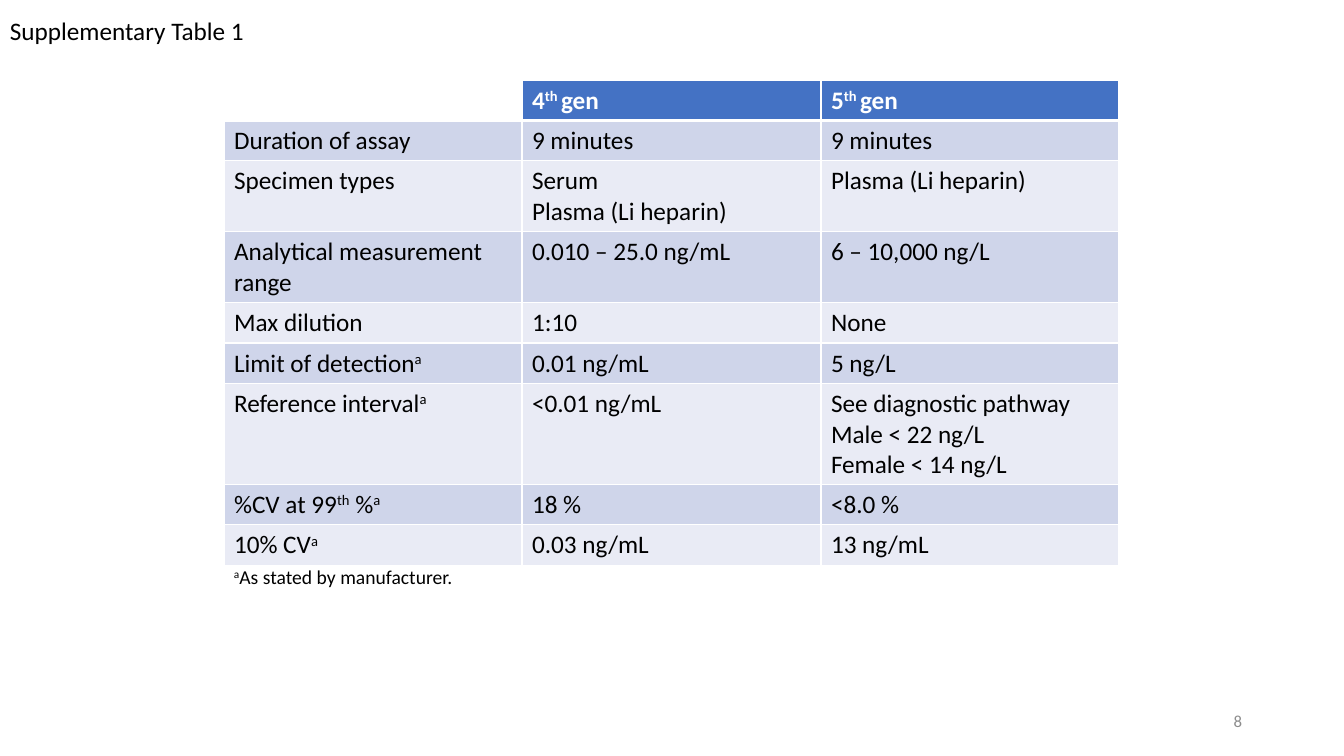
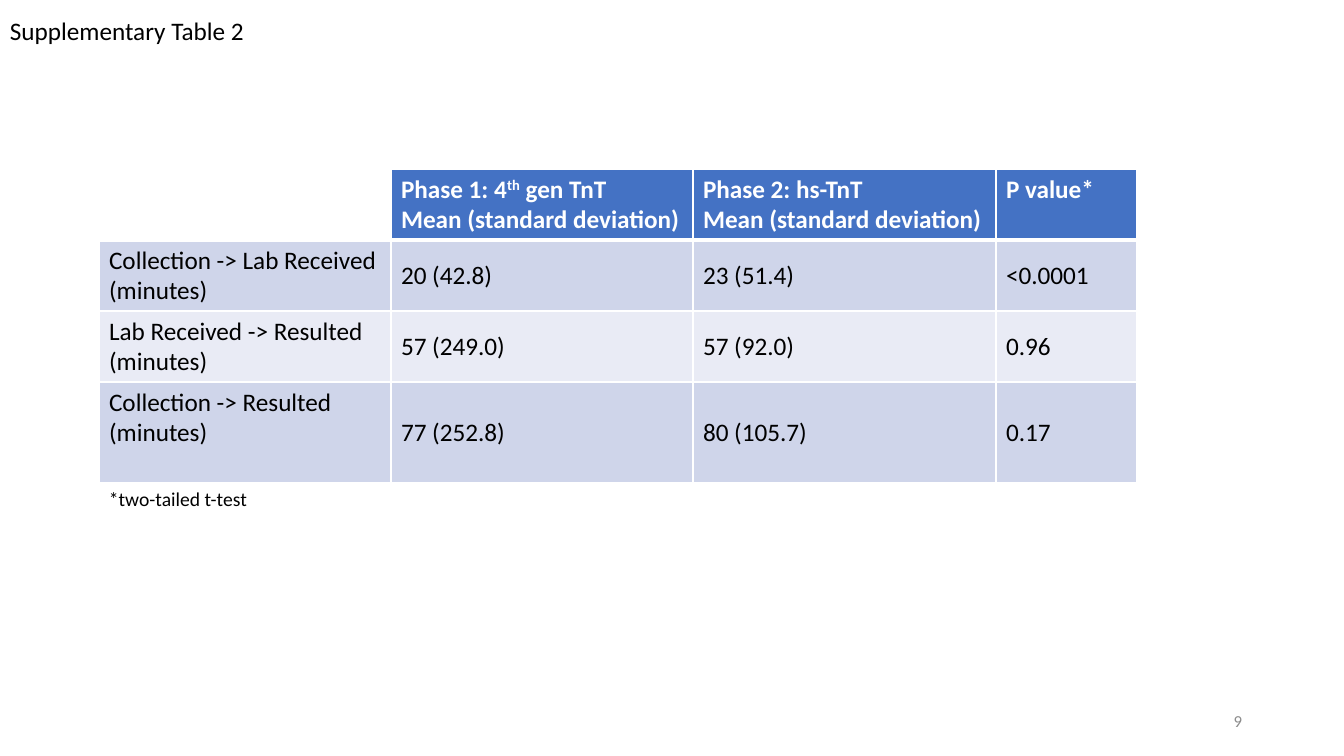
from lxml import etree
from pptx import Presentation
from pptx import util as u
from pptx.dml.color import RGBColor
from pptx.enum import text
from pptx.oxml.ns import qn

PX = 914400 / 100.8  # EMU in one px; the slide is 1344 x 756 px
ROW_HEIGHT = {1: 40, 2: 71, 3: 101}  # px, by lines of text

# Text formats
TITLE = dict(size=18, color="000000")
HEADER = dict(size=18, color="FFFFFF", bold=True)
BODY = dict(size=18, color="000000", bold=False)
NOTE = dict(size=14, color="000000")
NUMBER = dict(size=12, color="8C8C8C")

TOP, MIDDLE = text.MSO_ANCHOR.TOP, text.MSO_ANCHOR.MIDDLE
LEFT, RIGHT = text.PP_ALIGN.LEFT, text.PP_ALIGN.RIGHT


def px(length):
    return u.Emu(round(length * PX))


def rgb(value):
    return RGBColor.from_string(value)


class Deck:
    font = "Calibri"
    header_fill = "4472C4"
    bands = ("CFD5EA", "E9EBF5")
    rule = "FFFFFF"

    def __init__(self):
        self.prs = Presentation()
        self.prs.slide_width, self.prs.slide_height = px(1344), px(756)
        self.slide = None

    def page(self, title, number):
        """Start a slide with its shared title and page number."""
        self.slide = self.prs.slides.add_slide(self.prs.slide_layouts[6])
        self.label(number, (950, 701, 302, 40), NUMBER, RIGHT, MIDDLE)
        self.label(title, (0, 10, 291, 40), TITLE)

    def set_text(self, frame, content, style, align=LEFT):
        """One paragraph a line; text between ^ marks is superscript."""
        for i, line in enumerate(content.split("\n")):
            para = frame.paragraphs[0] if i == 0 else frame.add_paragraph()
            para.alignment = align
            for j, part in enumerate(line.split("^")):
                if not part:
                    continue
                run = para.add_run()
                run.text = part
                self.style_font(run.font, style)
                if j % 2:
                    run._r.get_or_add_rPr().set("baseline", "30000")

    def style_font(self, font, style):
        font.name = self.font
        for name, value in style.items():
            if name == "color":
                font.color.rgb = rgb(value)
            else:
                setattr(font, name, u.Pt(value) if name == "size" else value)

    def label(self, content, box, style, align=LEFT, anchor=TOP, wrap=True):
        frame = self.slide.shapes.add_textbox(*map(px, box)).text_frame
        frame.word_wrap = wrap
        frame.vertical_anchor = anchor
        self.set_text(frame, content, style, align)

    def border(self, cell, **widths):
        props = cell._tc.get_or_add_tcPr()
        for side in "LRTB":
            line = etree.SubElement(props, qn(f"a:ln{side}"),
                                    w=str(u.Pt(widths.get(side, 1))))
            fill = etree.SubElement(line, qn("a:solidFill"))
            etree.SubElement(fill, qn("a:srgbClr"), val=self.rule)

    def table(self, corner, columns, line_counts, rows, value_anchor=TOP):
        heights = [ROW_HEIGHT[count] for count in line_counts]
        size = sum(columns), sum(heights)
        grid = self.slide.shapes.add_table(
            len(rows), len(columns), *map(px, (*corner, *size))).table
        grid.horz_banding = False
        for column, width in zip(grid.columns, columns):
            column.width = px(width)
        for r, (row, height) in enumerate(zip(rows, heights)):
            grid.rows[r].height = px(height)
            for c, content in enumerate(row):
                cell = grid.cell(r, c)
                # A thick rule parts the header from the body
                self.border(cell, **{0: {"B": 3}, 1: {"T": 3}}.get(r, {}))
                if content:
                    cell.fill.solid()
                    cell.fill.fore_color.rgb = rgb(
                        self.bands[(r - 1) % 2] if r else self.header_fill)
                else:
                    cell.fill.background()
                cell.vertical_anchor = value_anchor if r and c else TOP
                self.set_text(cell.text_frame, content, BODY if r else HEADER)


def main():
    deck = Deck()

    # Assay comparison
    deck.page("Supplementary Table 1", "8")
    deck.table((224, 80), (298, 299, 298), (1, 1, 2, 2, 1, 1, 3, 1, 1), [
        ("", "4^th ^gen", "5^th ^gen"),
        ("Duration of assay", "9 minutes", "9 minutes"),
        ("Specimen types", "Serum\nPlasma (Li heparin)",
         "Plasma (Li heparin)"),
        ("Analytical measurement range", "0.010 – 25.0 ng/mL",
         "6 – 10,000 ng/L"),
        ("Max dilution", "1:10", "None"),
        ("Limit of detection^a^", "0.01 ng/mL", "5 ng/L"),
        ("Reference interval^a^", "<0.01 ng/mL",
         "See diagnostic pathway\nMale < 22 ng/L\nFemale < 14 ng/L"),
        ("%CV at 99^th^ %^a^", "18 %", "<8.0 %"),
        ("10% CV^a^", "0.03 ng/mL", "13 ng/mL"),
    ])
    deck.label("^a^As stated by manufacturer.", (224, 560, 1043, 34), NOTE)

    # Turnaround times
    deck.page("Supplementary Table 2", "9")
    mean = "\nMean (standard deviation)"
    deck.table((99, 169), (292, 302, 303, 141), (2, 2, 2, 3), [
        ("", "Phase 1: 4^th^ gen TnT" + mean, "Phase 2: hs-TnT" + mean,
         "P value*"),
        ("Collection -> Lab Received\n(minutes)",
         "20 (42.8)", "23 (51.4)", "<0.0001"),
        ("Lab Received -> Resulted\n(minutes)",
         "57 (249.0)", "57 (92.0)", "0.96"),
        ("Collection -> Resulted\n(minutes)",
         "77 (252.8)", "80 (105.7)", "0.17"),
    ], value_anchor=MIDDLE)
    deck.label("*two-tailed t-test", (99, 482, 160, 34), NOTE, wrap=False)

    deck.prs.save("out.pptx")


if __name__ == "__main__":
    main()
